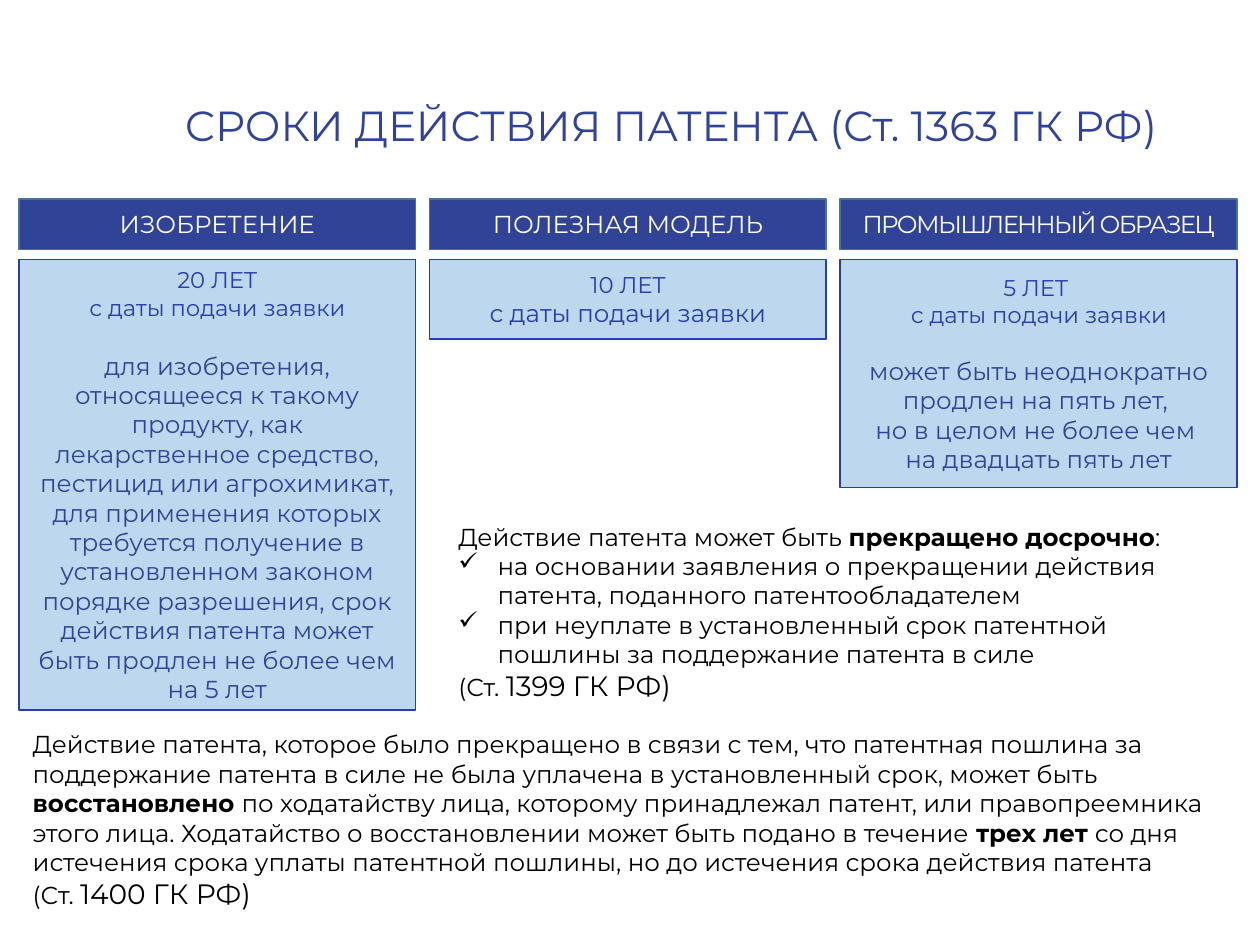
from copy import deepcopy
from lxml import etree
from pptx import Presentation
from pptx.dml.color import RGBColor
from pptx.enum import shapes, text
from pptx.oxml import ns
from pptx.util import Cm, Pt

FONT = "Montserrat"
NAVY = RGBColor(0x31, 0x43, 0x96)
BLUE = RGBColor(0x29, 0x3D, 0xAD)
PALE = RGBColor(0xBD, 0xD7, 0xEE)
EDGE = RGBColor(0x43, 0x73, 0x9E)
WHITE = RGBColor(0xFF, 0xFF, 0xFF)
BLACK = RGBColor(0, 0, 0)

# Column: heading, letter spacing, body height, paragraphs as (gap before, runs)
COLS = [
    ("ИЗОБРЕТЕНИЕ", 0, 9.09, [
        (0, [("20 ЛЕТ", 13, BLUE)]),
        (0, [("с даты подачи заявки", 13, BLUE)]),
        (17, [("для изобретения, относящееся к такому продукту, как "
               "лекарственное средство, пестицид или агрохимикат, для "
               "применения которых требуется получение в установленном "
               "законом порядке разрешения, срок действия патента может "
               "быть продлен не более чем на 5 лет", 14, NAVY)])]),
    ("ПОЛЕЗНАЯ МОДЕЛЬ", 0, 1.6, [
        (0, [("10 ЛЕТ\n", 13, BLUE), ("с даты подачи заявки", 14, BLUE)])]),
    ("ПРОМЫШЛЕННЫЙ ОБРАЗЕЦ", -1, 4.6, [
        (0, [("5 ЛЕТ \nс даты подачи заявки", 13, BLUE)]),
        (16, [("может быть неоднократно продлен на пять лет, \n"
               "но в целом не более чем \nна двадцать пять лет", 14, NAVY)])]),
]

# Notes: paragraphs as (bulleted, runs of (text, size, bold))
EARLY = [
    (False, [("Действие патента может быть ", 14, False),
             ("прекращено досрочно", 14, True), (":", 14, False)]),
    (True, [("на основании заявления о прекращении действия патента, "
             "поданного патентообладателем", 14, False)]),
    (True, [("при неуплате в установленный срок патентной пошлины "
             "за поддержание патента в силе", 14, False)]),
    (False, [("(Ст. ", 14, False), ("1399 ГК РФ)", 16, False)]),
]
RENEW = [
    (False, [("Действие патента, которое было прекращено в связи с тем, что "
              "патентная пошлина за поддержание патента в силе не была "
              "уплачена в установленный срок, может быть ", 14, False),
             ("восстановлено ", 14, True),
             ("по ходатайству лица, которому принадлежал патент, или "
              "правопреемника этого лица. Ходатайство о восстановлении "
              "может быть подано в течение ", 14, False),
             ("трех лет ", 14, True),
             ("со дня истечения срока уплаты патентной пошлины, но до "
              "истечения срока действия патента", 14, False)]),
    (False, [("(Ст. ", 14, False), ("1400 ГК РФ)", 16, False)]),
]


def add_run(para, words, size, color, bold=False, track=0):
    """Add text to a paragraph; a newline becomes a line break."""
    for i, part in enumerate(words.split("\n")):
        if i:
            para.add_line_break()
            brk = para._p.findall(ns.qn("a:br"))[-1]
            brk.append(deepcopy(run._r.rPr))
        if not part:
            continue
        run = para.add_run()
        run.text = part
        font = run.font
        font.name, font.size, font.bold = FONT, Pt(size), bold
        font.color.rgb = color
        if track:
            run._r.rPr.set("spc", str(track * 100))


def add_para(frame, first):
    return frame.paragraphs[0] if first else frame.add_paragraph()


def add_bullet(para):
    props = para._p.get_or_add_pPr()
    props.set("marL", str(Cm(0.79)))
    props.set("indent", str(-Cm(0.79)))
    etree.SubElement(props, ns.qn("a:buChar")).set("char", "✓")


def add_box(slide, x, y, w, h, fill, line):
    box = slide.shapes.add_shape(shapes.MSO_SHAPE.RECTANGLE,
                                 Cm(x), Cm(y), Cm(w), Cm(h))
    box.shadow.inherit = False
    box.fill.solid()
    box.fill.fore_color.rgb = fill
    box.line.color.rgb = line
    box.line.width = Pt(1)
    frame = box.text_frame
    frame.word_wrap = True
    frame.vertical_anchor = text.MSO_ANCHOR.MIDDLE
    return frame


def add_title(slide, x, y, w, h):
    frame = slide.shapes.add_textbox(Cm(x), Cm(y), Cm(w), Cm(h)).text_frame
    frame.word_wrap = True
    frame.vertical_anchor = text.MSO_ANCHOR.MIDDLE
    para = frame.paragraphs[0]
    para.line_spacing = 0.9
    add_run(para, "СРОКИ ДЕЙСТВИЯ ПАТЕНТА (Ст. 1363 ГК РФ)", 24, NAVY)


def add_col(slide, x, y, w, head, track, tall, paras):
    # Heading
    para = add_box(slide, x, y, w, 1.02, NAVY, EDGE).paragraphs[0]
    para.alignment = text.PP_ALIGN.CENTER
    add_run(para, head, 14, WHITE, track=track)
    # Term
    frame = add_box(slide, x, y + 1.22, w, tall, PALE, BLUE)
    for i, (gap, runs) in enumerate(paras):
        para = add_para(frame, i == 0)
        para.alignment = text.PP_ALIGN.CENTER
        if gap:
            para.space_before = Pt(gap)
        for run in runs:
            add_run(para, *run)


def add_note(slide, x, y, w, h, paras):
    frame = slide.shapes.add_textbox(Cm(x), Cm(y), Cm(w), Cm(h)).text_frame
    frame.word_wrap = True
    for i, (mark, runs) in enumerate(paras):
        para = add_para(frame, i == 0)
        if mark:
            add_bullet(para)
        for words, size, bold in runs:
            add_run(para, words, size, BLACK, bold)


def main():
    deck = Presentation()
    deck.slide_width, deck.slide_height = Cm(25.4), Cm(19.05)
    slide = deck.slides.add_slide(deck.slide_layouts[6])
    add_title(slide, 3.48, 0.74, 20.88, 3.68)
    for i, col in enumerate(COLS):
        add_col(slide, 0.38 + i * 8.28, 4.01, 8, *col)
    add_note(slide, 8.99, 10.39, 15.95, 4.01, EARLY)
    add_note(slide, 0.41, 14.58, 24.54, 3.94, RENEW)
    deck.save("out.pptx")


if __name__ == "__main__":
    main()
